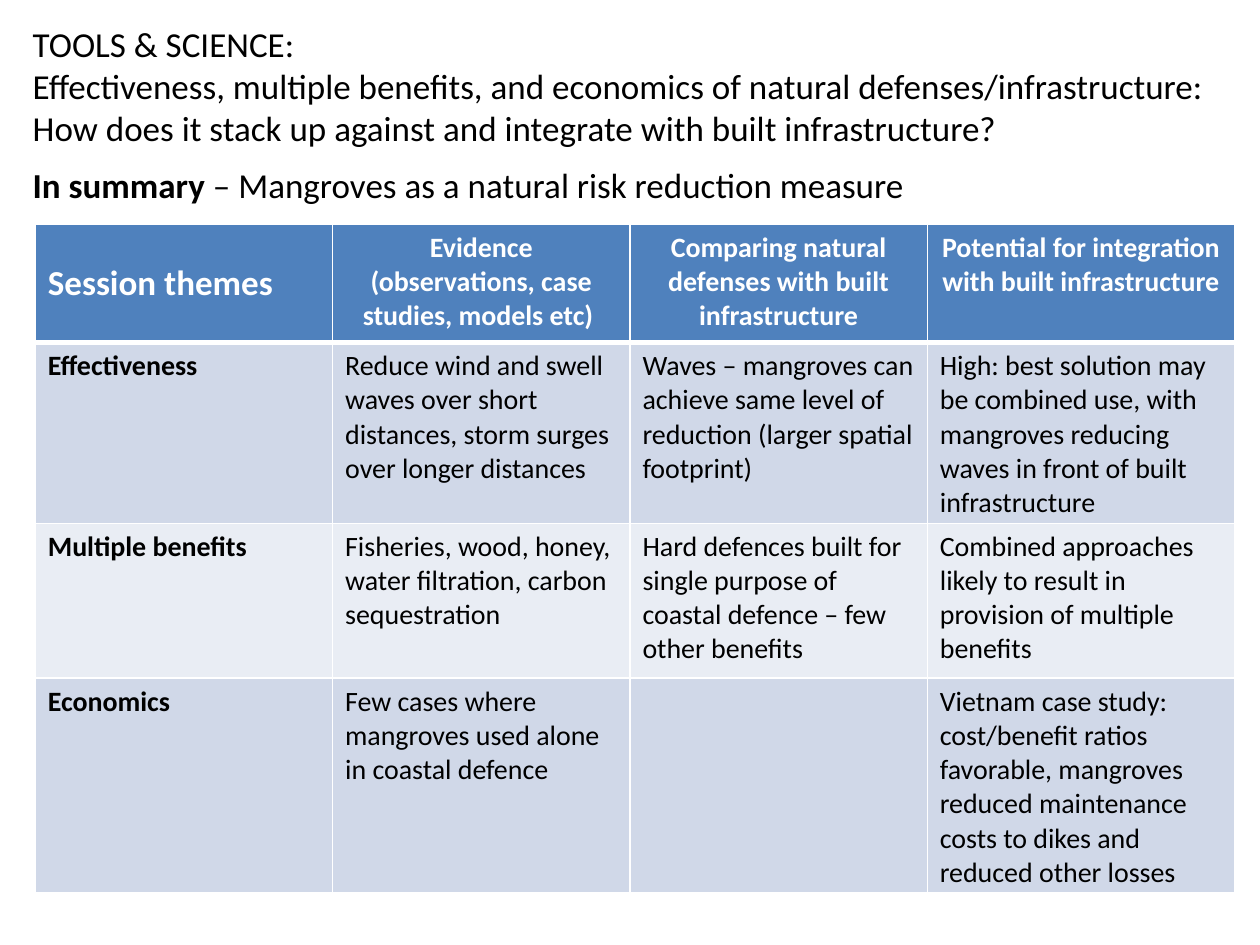
import pptx
import pptx.util
import pptx.dml.color
import pptx.enum.text
import pptx.oxml.ns
from lxml import etree

Inches = pptx.util.Inches
RGBColor = pptx.dml.color.RGBColor
PP_ALIGN = pptx.enum.text.PP_ALIGN
MSO_ANCHOR = pptx.enum.text.MSO_ANCHOR
MSO_AUTO_SIZE = pptx.enum.text.MSO_AUTO_SIZE

WHITE = RGBColor(0xFF, 0xFF, 0xFF)
BLACK = RGBColor(0, 0, 0)
HEADER_BLUE = RGBColor(0x4F, 0x81, 0xBD)
BANDS = (RGBColor(0xD0, 0xD8, 0xE8), RGBColor(0xE9, 0xED, 0xF4))
FONT = "Calibri"
LARGE, SMALL = 20, 16
MARGIN, CONTENT_WIDTH = 0.16, 9.53
TABLE_LEFT, TABLE_TOP, TABLE_HEIGHT = 0.28, 1.78, 5.3
COLUMN_WIDTHS = (2.36, 2.36, 2.36, 2.44)
ROW_HEIGHTS = (0.94, 1.32, 1.23, 1.39)

TITLE = (
    "TOOLS & SCIENCE:\n"
    "Effectiveness, multiple benefits, and economics of natural defenses/infrastructure: "
    "How does it stack up against and integrate with built infrastructure?"
)
SUMMARY = (("In summary", True), (" – Mangroves as a natural risk reduction measure", False))
ROWS = (
    (
        "Session themes",
        "Evidence (observations, case studies, models etc) ",
        "Comparing natural defenses with built infrastructure",
        "Potential for integration with built infrastructure",
    ),
    (
        "Effectiveness",
        "Reduce wind and swell waves over short distances, storm surges over longer distances",
        "Waves – mangroves can achieve same level of reduction (larger spatial footprint)",
        "High: best solution may be combined use, with mangroves reducing waves in front of built infrastructure",
    ),
    (
        "Multiple benefits",
        "Fisheries, wood, honey, water filtration, carbon sequestration",
        "Hard defences built for single purpose of coastal defence – few other benefits",
        "Combined approaches likely to result in provision of multiple benefits",
    ),
    (
        "Economics",
        "Few cases where mangroves used alone in coastal defence",
        "",
        "Vietnam case study: cost/benefit ratios favorable, mangroves reduced maintenance costs to dikes and reduced other losses",
    ),
)


def style_font(font, size, color=BLACK, bold=False):
    font.name = FONT
    font.size = pptx.util.Pt(size)
    font.bold = bold
    font.color.rgb = color


def place_title(slide):
    title = slide.shapes.title
    title.left, title.top = Inches(MARGIN), Inches(0.13)
    title.width, title.height = Inches(CONTENT_WIDTH), Inches(1.11)
    frame = title.text_frame
    frame.text = TITLE
    frame.word_wrap = True
    frame.auto_size = MSO_AUTO_SIZE.SHAPE_TO_FIT_TEXT
    frame.vertical_anchor = MSO_ANCHOR.TOP
    for paragraph in frame.paragraphs:
        paragraph.alignment = PP_ALIGN.LEFT
        for run in paragraph.runs:
            style_font(run.font, LARGE)


def add_summary(slide):
    box = slide.shapes.add_textbox(Inches(MARGIN), Inches(1.25), Inches(7.32), Inches(0.44))
    frame = box.text_frame
    frame.word_wrap = False
    frame.auto_size = MSO_AUTO_SIZE.SHAPE_TO_FIT_TEXT
    for text, bold in SUMMARY:
        run = frame.paragraphs[0].add_run()
        run.text = text
        style_font(run.font, LARGE, bold=bold)


def add_border(cell, side, points):
    properties = cell._tc.get_or_add_tcPr()
    line = etree.SubElement(properties, pptx.oxml.ns.qn(f"a:ln{side}"), w=str(pptx.util.Pt(points)))
    fill = etree.SubElement(line, pptx.oxml.ns.qn("a:solidFill"))
    etree.SubElement(fill, pptx.oxml.ns.qn("a:srgbClr"), val=str(WHITE))


def fill_cell(cell, text, row, column):
    header, first = row == 0, column == 0
    for side in "LRTB":
        thick = (header and side == "B") or (row == 1 and side == "T")
        add_border(cell, side, 3 if thick else 1)
    cell.fill.solid()
    cell.fill.fore_color.rgb = HEADER_BLUE if header else BANDS[(row - 1) % 2]
    cell.vertical_anchor = MSO_ANCHOR.MIDDLE if header and first else MSO_ANCHOR.TOP
    paragraph = cell.text_frame.paragraphs[0]
    paragraph.text = text
    paragraph.alignment = PP_ALIGN.CENTER if header and not first else PP_ALIGN.LEFT
    size = LARGE if header and first else SMALL
    style_font(paragraph.font, size)
    for run in paragraph.runs:
        style_font(run.font, size, WHITE if header else BLACK, header or first)


def add_themes_table(slide):
    graphic_frame = slide.shapes.add_table(
        len(ROWS), len(COLUMN_WIDTHS), Inches(TABLE_LEFT), Inches(TABLE_TOP),
        Inches(CONTENT_WIDTH), Inches(TABLE_HEIGHT),
    )
    table = graphic_frame.table
    for column, width in zip(table.columns, COLUMN_WIDTHS):
        column.width = Inches(width)
    for row, height in zip(table.rows, ROW_HEIGHTS):
        row.height = Inches(height)
    graphic_frame.height = Inches(TABLE_HEIGHT)
    for row, texts in enumerate(ROWS):
        for column, text in enumerate(texts):
            fill_cell(table.cell(row, column), text, row, column)


def main():
    presentation = pptx.Presentation()
    presentation.slide_width, presentation.slide_height = Inches(10), Inches(7.5)
    slide = presentation.slides.add_slide(presentation.slide_layouts[5])
    add_themes_table(slide)
    place_title(slide)
    add_summary(slide)
    presentation.save("out.pptx")


if __name__ == "__main__":
    main()
